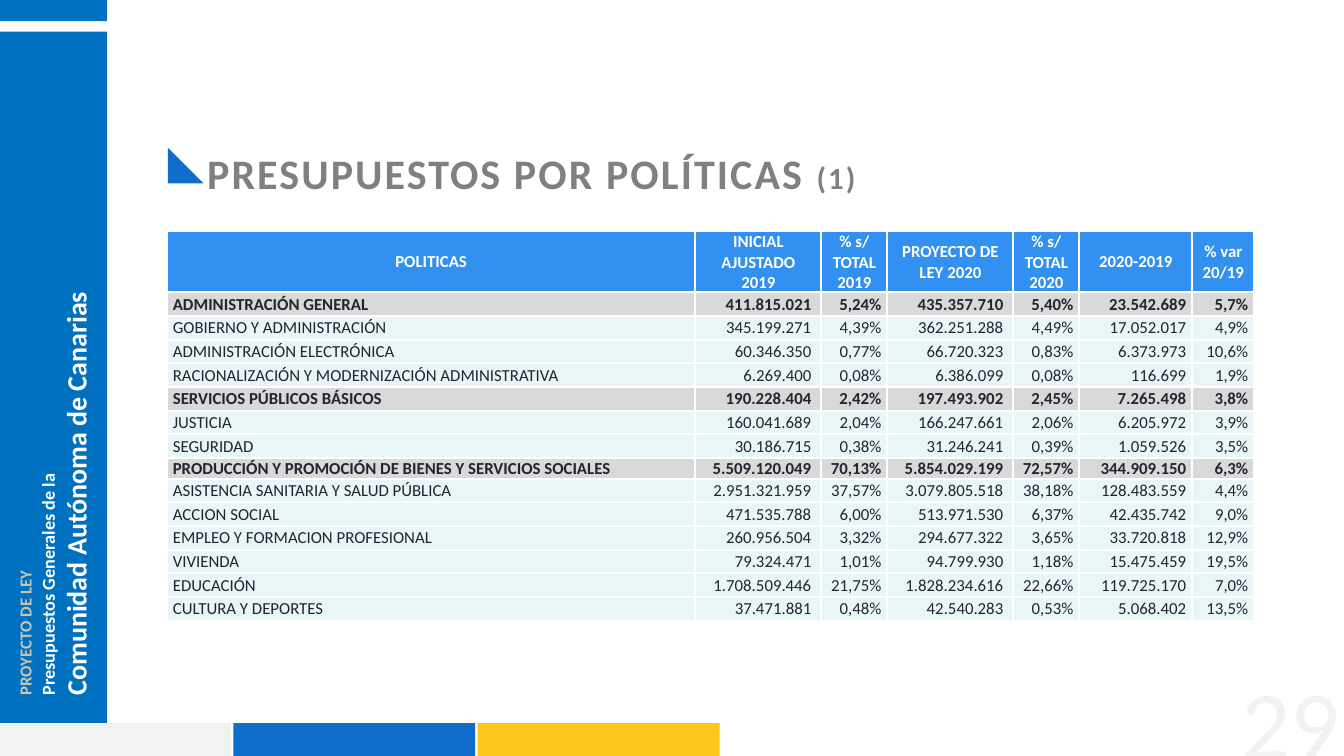
from lxml import etree
from pptx import Presentation
from pptx.dml.color import RGBColor
from pptx.enum.shapes import MSO_SHAPE
from pptx.enum.text import MSO_ANCHOR, MSO_AUTO_SIZE, PP_ALIGN
from pptx.oxml.ns import qn
from pptx.util import Inches, Pt

WHITE = RGBColor(0xFF, 0xFF, 0xFF)
SIDE_BLUE = RGBColor(0x00, 0x70, 0xC0)
BLUE = RGBColor(0x0F, 0x6D, 0xCB)
YELLOW = RGBColor(0xFB, 0xC7, 0x1A)
LIGHT = RGBColor(0xF2, 0xF2, 0xF2)
SAND = RGBColor(0xC8, 0xC5, 0xB4)
TITLE_GREY = RGBColor(0x80, 0x80, 0x80)
HEADER_BLUE = RGBColor(0x32, 0x91, 0xF0)
GROUP_GREY = RGBColor(0xD9, 0xD9, 0xD9)
ROW_TINT = RGBColor(0xE8, 0xF6, 0xF7)
INK = RGBColor(0x25, 0x23, 0x2F)
FONT = "Calibri"

TITLE = [("PRESUPUESTOS POR POLÍTICAS ", 60), ("(1)", 44)]
HEADER = ["POLITICAS", "INICIAL AJUSTADO\v2019", "% s/ TOTAL 2019", "PROYECTO DE LEY 2020",
          "% s/ TOTAL 2020", "2020-2019", "% var 20/19"]
POLICIES = [
    ("ADMINISTRACIÓN GENERAL", "411.815.021", "5,24%", "435.357.710", "5,40%", "23.542.689", "5,7%"),
    ("GOBIERNO Y ADMINISTRACIÓN", "345.199.271", "4,39%", "362.251.288", "4,49%", "17.052.017", "4,9%"),
    ("ADMINISTRACIÓN ELECTRÓNICA", "60.346.350", "0,77%", "66.720.323", "0,83%", "6.373.973", "10,6%"),
    ("RACIONALIZACIÓN Y MODERNIZACIÓN ADMINISTRATIVA", "6.269.400", "0,08%", "6.386.099", "0,08%",
     "116.699", "1,9%"),
    ("SERVICIOS PÚBLICOS BÁSICOS", "190.228.404", "2,42%", "197.493.902", "2,45%", "7.265.498", "3,8%"),
    ("JUSTICIA", "160.041.689", "2,04%", "166.247.661", "2,06%", "6.205.972", "3,9%"),
    ("SEGURIDAD", "30.186.715", "0,38%", "31.246.241", "0,39%", "1.059.526", "3,5%"),
    ("PRODUCCIÓN Y PROMOCIÓN DE BIENES Y SERVICIOS SOCIALES", "5.509.120.049", "70,13%",
     "5.854.029.199", "72,57%", "344.909.150", "6,3%"),
    ("ASISTENCIA SANITARIA Y SALUD PÚBLICA", "2.951.321.959", "37,57%", "3.079.805.518", "38,18%",
     "128.483.559", "4,4%"),
    ("ACCION SOCIAL", "471.535.788", "6,00%", "513.971.530", "6,37%", "42.435.742", "9,0%"),
    ("EMPLEO Y FORMACION PROFESIONAL", "260.956.504", "3,32%", "294.677.322", "3,65%", "33.720.818", "12,9%"),
    ("VIVIENDA", "79.324.471", "1,01%", "94.799.930", "1,18%", "15.475.459", "19,5%"),
    ("EDUCACIÓN", "1.708.509.446", "21,75%", "1.828.234.616", "22,66%", "119.725.170", "7,0%"),
    ("CULTURA Y DEPORTES", "37.471.881", "0,48%", "42.540.283", "0,53%", "5.068.402", "13,5%"),
]
GROUPS = {"ADMINISTRACIÓN GENERAL", "SERVICIOS PÚBLICOS BÁSICOS",
          "PRODUCCIÓN Y PROMOCIÓN DE BIENES Y SERVICIOS SOCIALES"}
COL_WIDTHS = [10.49, 2.5, 1.31, 2.5, 1.31, 2.24, 1.23]
HEADER_HEIGHT, ROW_HEIGHT, TIGHT_HEIGHT = 1.05, 0.47, 0.37
TIGHT_ROW = 8
AMOUNT_COLS = (1, 3)

SIDE_X, SIDE_W = -0.09, 2.21
BAR_X, BAR_Y, BAR_W, BAR_H, BAR_PITCH = -0.22, 14.35, 4.8, 0.99, 4.85


def place(left, top, width, height):
    return [Inches(v) for v in (left, top, width, height)]


def style(run, size, color, bold=False):
    font = run.font
    font.name, font.size, font.bold = FONT, Pt(size), bold
    font.color.rgb = color


def add_block(slide, box, color, kind=MSO_SHAPE.RECTANGLE):
    sp = slide.shapes.add_shape(kind, *place(*box))
    sp.shadow.inherit = False
    sp.fill.solid()
    sp.fill.fore_color.rgb = color
    sp.line.fill.background()


def add_text(slide, box, lines, rotation=0, margins=(0.1, 0.05, 0.1, 0.05), align=PP_ALIGN.LEFT):
    """Add a text box; lines holds (text, size, color, bold) per paragraph."""
    sp = slide.shapes.add_textbox(*place(*box))
    sp.rotation = rotation
    tf = sp.text_frame
    tf.word_wrap = True
    tf.margin_left, tf.margin_top, tf.margin_right, tf.margin_bottom = place(*margins)
    tf.text = "\n".join(line[0] for line in lines)
    for p, (_, size, color, bold) in zip(tf.paragraphs, lines):
        p.alignment = align
        style(p.runs[0], size, color, bold)


def set_borders(cell, color, width):
    tcPr = cell._tc.get_or_add_tcPr()
    for i, side in enumerate(("lnL", "lnR", "lnT", "lnB")):
        ln = etree.Element(qn(f"a:{side}"), w=str(Pt(width)))
        fill = etree.SubElement(ln, qn("a:solidFill"))
        etree.SubElement(fill, qn("a:srgbClr"), val=str(color))
        tcPr.insert(i, ln)


def fill_cell(cell, text, fill, color, bold, align, right_margin):
    cell.fill.solid()
    cell.fill.fore_color.rgb = fill
    set_borders(cell, WHITE, 3)
    cell.vertical_anchor = MSO_ANCHOR.MIDDLE
    cell.margin_left, cell.margin_right = Inches(0.12), Inches(right_margin)
    cell.margin_top, cell.margin_bottom = Inches(0.01), 0
    p = cell.text_frame.paragraphs[0]
    p.text = text
    p.alignment = align
    for r in p.runs:
        style(r, 24, color, bold)


def add_title(slide):
    title = slide.shapes.title
    title.left, title.top, title.width, title.height = place(4.01, 2.88, 21.93, 0.81)
    tf = title.text_frame
    tf.auto_size = MSO_AUTO_SIZE.NONE
    tf.vertical_anchor = MSO_ANCHOR.TOP
    p = tf.paragraphs[0]
    p.alignment = PP_ALIGN.LEFT
    for text, size in TITLE:
        r = p.add_run()
        r.text = text
        style(r, size, TITLE_GREY, True)
        r.font._element.set("spc", "300")


def add_budget_table(slide):
    heights = [HEADER_HEIGHT] + [ROW_HEIGHT] * len(POLICIES)
    heights[TIGHT_ROW] = TIGHT_HEIGHT
    box = place(3.31, 4.59, sum(COL_WIDTHS), sum(heights))
    table = slide.shapes.add_table(len(heights), len(COL_WIDTHS), *box).table
    for column, width in zip(table.columns, COL_WIDTHS):
        column.width = Inches(width)
    for row, height in zip(table.rows, heights):
        row.height = Inches(height)
    for c, text in enumerate(HEADER):
        fill_cell(table.cell(0, c), text, HEADER_BLUE, WHITE, True, PP_ALIGN.CENTER, 0.12)
    for r, policy in enumerate(POLICIES, 1):
        is_group = policy[0] in GROUPS
        fill = GROUP_GREY if is_group else ROW_TINT
        for c, text in enumerate(policy):
            align = PP_ALIGN.RIGHT if c else PP_ALIGN.LEFT
            right_margin = 0.2 if c in AMOUNT_COLS else 0.12
            fill_cell(table.cell(r, c), text, fill, INK, is_group, align, right_margin)


def main():
    prs = Presentation()
    prs.slide_width, prs.slide_height = Inches(26.67), Inches(15)
    slide = prs.slides.add_slide(prs.slide_layouts[5])

    add_block(slide, (SIDE_X, 0.63, SIDE_W, 14.51), SIDE_BLUE)
    for i, color in enumerate((LIGHT, BLUE, YELLOW)):
        add_block(slide, (BAR_X + i * BAR_PITCH, BAR_Y, BAR_W, BAR_H), color)
    add_block(slide, (SIDE_X, -0.06, SIDE_W, 0.48), SIDE_BLUE)

    add_text(slide, (-5.96, 7.14, 12.91, 0.4), [("PROYECTO DE LEY", 24, SAND, True)],
             rotation=270, margins=(0, 0, 0, 0))
    add_text(slide, (-2.85, 9.19, 8.19, 1.03),
             [("Presupuestos Generales de la", 26, WHITE, True),
              ("Comunidad Autónoma de Canarias", 40, WHITE, True)],
             rotation=270, margins=(0, 0, 0.1, 0))
    add_text(slide, (20.47, 13.09, 6.22, 1.92), [("29", 139, LIGHT, False)], align=PP_ALIGN.RIGHT)

    add_title(slide)
    add_block(slide, (3.33, 2.93, 0.71, 0.71), BLUE, MSO_SHAPE.RIGHT_TRIANGLE)
    add_budget_table(slide)
    prs.save("out.pptx")


if __name__ == "__main__":
    main()
